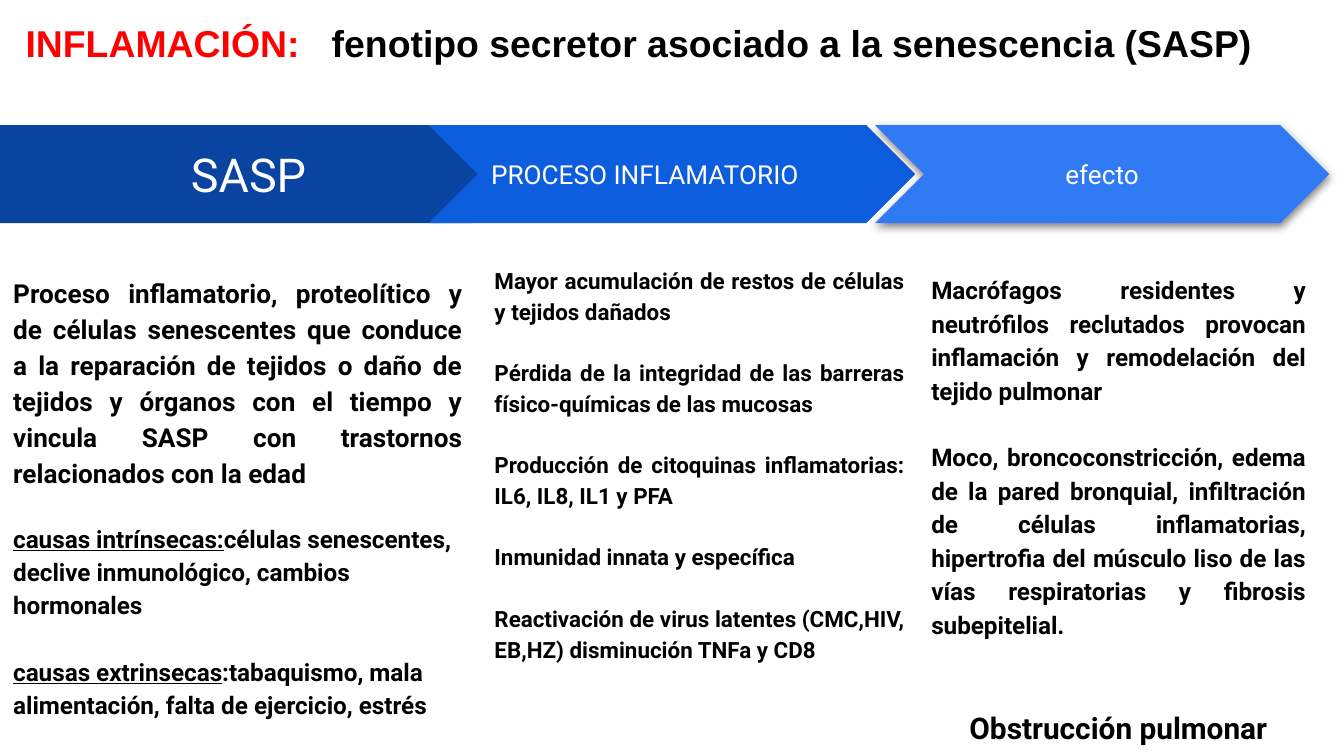
import pptx
import pptx.util
import pptx.dml.color
import pptx.enum.shapes
import pptx.enum.text
import pptx.oxml
import pptx.oxml.ns
import lxml.etree

Pt = pptx.util.Pt
ALIGN = pptx.enum.text.PP_ALIGN
ANCHOR = pptx.enum.text.MSO_ANCHOR
SHAPE = pptx.enum.shapes.MSO_SHAPE
INSET = 7.2
LINE_SPACING = 1.15
LINE_HEIGHT = 1.35  # height of one spaced line, as a multiple of the text size


def colour(hex_string):
    return pptx.dml.color.RGBColor.from_string(hex_string)


def tag(name):
    return pptx.oxml.ns.qn(name)


def place(shape, box):
    shape.left, shape.top, shape.width, shape.height = [Pt(value) for value in box]


def set_frame(frame, anchor=ANCHOR.TOP):
    frame.word_wrap = True
    frame.auto_size = pptx.enum.text.MSO_AUTO_SIZE.NONE
    frame.vertical_anchor = anchor
    frame.margin_left = frame.margin_right = Pt(INSET)
    frame.margin_top = frame.margin_bottom = Pt(INSET)


def add_span(para, text, size=13, font="Roboto", ink="000000", bold=True, underline=False):
    span = para.add_run()
    span.text = text
    span.font.size = Pt(size)
    span.font.name = font
    span.font.bold = bold
    span.font.underline = underline
    span.font.color.rgb = colour(ink)


def add_title(page, box):
    title = page.shapes.title
    place(title, box)
    set_frame(title.text_frame)
    para = title.text_frame.paragraphs[0]
    para.alignment = ALIGN.LEFT
    # A tab stop separates the red keyword from the rest
    tabs = lxml.etree.SubElement(para._p.get_or_add_pPr(), tag("a:tabLst"))
    lxml.etree.SubElement(tabs, tag("a:tab"), pos=str(Pt(164)), algn="l")
    add_span(para, "INFLAMACIÓN:\t", size=20, font="Arial", ink="FF0000")
    add_span(para, "fenotipo secretor asociado a la senescencia (SASP)", size=20, font="Arial")


def add_shadow(shape):
    effects = shape._element.spPr.find(tag("a:effectLst"))
    shadow = lxml.etree.SubElement(
        effects, tag("a:outerShdw"), blurRad=str(Pt(4.5)), dist=str(Pt(1.5)),
        dir="5400000", algn="bl", rotWithShape="0")
    ink = lxml.etree.SubElement(shadow, tag("a:srgbClr"), val="000000")
    lxml.etree.SubElement(ink, tag("a:alpha"), val="50000")


def add_step(page, box, kind, text, fill, size=14, align=ALIGN.CENTER, shadow=False):
    step = page.shapes.add_shape(kind, *[Pt(value) for value in box])
    step.adjustments[0] = 0.5
    step.fill.solid()
    step.fill.fore_color.rgb = colour(fill)
    step.line.fill.background()
    step.shadow.inherit = False
    if shadow:
        add_shadow(step)
    set_frame(step.text_frame, ANCHOR.MIDDLE)
    para = step.text_frame.paragraphs[0]
    para.alignment = align
    add_span(para, text, size=size, ink="FFFFFF", bold=False)


def add_column(page, box, entries):
    """Each entry: (size, alignment, gap before, text, underlined lead)."""
    frame = page.shapes.add_textbox(*[Pt(value) for value in box]).text_frame
    set_frame(frame)
    for index, (size, align, gap, text, lead) in enumerate(entries):
        para = frame.add_paragraph() if index else frame.paragraphs[0]
        para.alignment = align
        para.line_spacing = LINE_SPACING
        para.space_before = Pt(round(gap, 1))
        if lead:
            add_span(para, lead, size=size, underline=True)
        add_span(para, text, size=size)


def add_steps(page, top, height):
    add_step(page, (0, top, 279.4, height), SHAPE.PENTAGON, "SASP", "0944A1", size=25)
    add_step(page, (229.7, top, 260.6, height), SHAPE.CHEVRON, "PROCESO INFLAMATORIO",
             "0D5DDF", align=ALIGN.LEFT)
    add_step(page, (468.7, top, 243.4, height), SHAPE.CHEVRON, "efecto", "307BF3", shadow=True)


def add_columns(page):
    small_gap, gap = 12 * LINE_HEIGHT, 13 * LINE_HEIGHT

    # Definition and causes
    add_column(page, (0, 139, 254.9, 250.6), [
        (14, ALIGN.JUSTIFY, 0, "Proceso inflamatorio, proteolítico y de células senescentes que "
         "conduce a la reparación de tejidos o daño de tejidos y órganos con el tiempo y vincula "
         "SASP con trastornos relacionados con la edad", ""),
        (13, ALIGN.LEFT, small_gap, "células senescentes, declive inmunológico, cambios hormonales",
         "causas intrínsecas:"),
        (13, ALIGN.LEFT, gap, ":tabaquismo, mala alimentación, falta de ejercicio, estrés",
         "causas extrinsecas"),
    ])

    # Inflammatory process
    stages = [
        "Mayor acumulación de restos de células y tejidos dañados",
        "Pérdida de la integridad de las barreras físico-químicas de las mucosas",
        "Producción de citoquinas inflamatorias: IL6, IL8, IL1 y PFA",
        "Inmunidad innata y específica",
        "Reactivación de virus latentes (CMC,HIV, EB,HZ) disminución TNFa y CD8",
    ]
    add_column(page, (257.8, 133.9, 234, 262.1), [
        (12, ALIGN.JUSTIFY, small_gap if index else 0, stage, "")
        for index, stage in enumerate(stages)])

    # Effects
    add_column(page, (491.8, 138.2, 214.6, 262.1), [
        (13, ALIGN.JUSTIFY, 0, "Macrófagos residentes y neutrófilos reclutados provocan "
         "inflamación y remodelación del tejido pulmonar", ""),
        (13, ALIGN.JUSTIFY, gap, "Moco, broncoconstricción, edema de la pared bronquial, "
         "infiltración de células inflamatorias, hipertrofia del músculo liso de las vías "
         "respiratorias y fibrosis subepitelial.", ""),
        (16, ALIGN.CENTER, 2 * gap, "Obstrucción pulmonar", ""),
    ])


def main():
    deck = pptx.Presentation()
    deck.slide_width, deck.slide_height = Pt(720), Pt(405)
    page = deck.slides.add_slide(deck.slide_layouts[5])
    add_title(page, (6.5, 3.6, 705.6, 38.9))
    add_columns(page)
    add_steps(page, top=67, height=52.6)
    deck.save("out.pptx")


if __name__ == "__main__":
    main()
